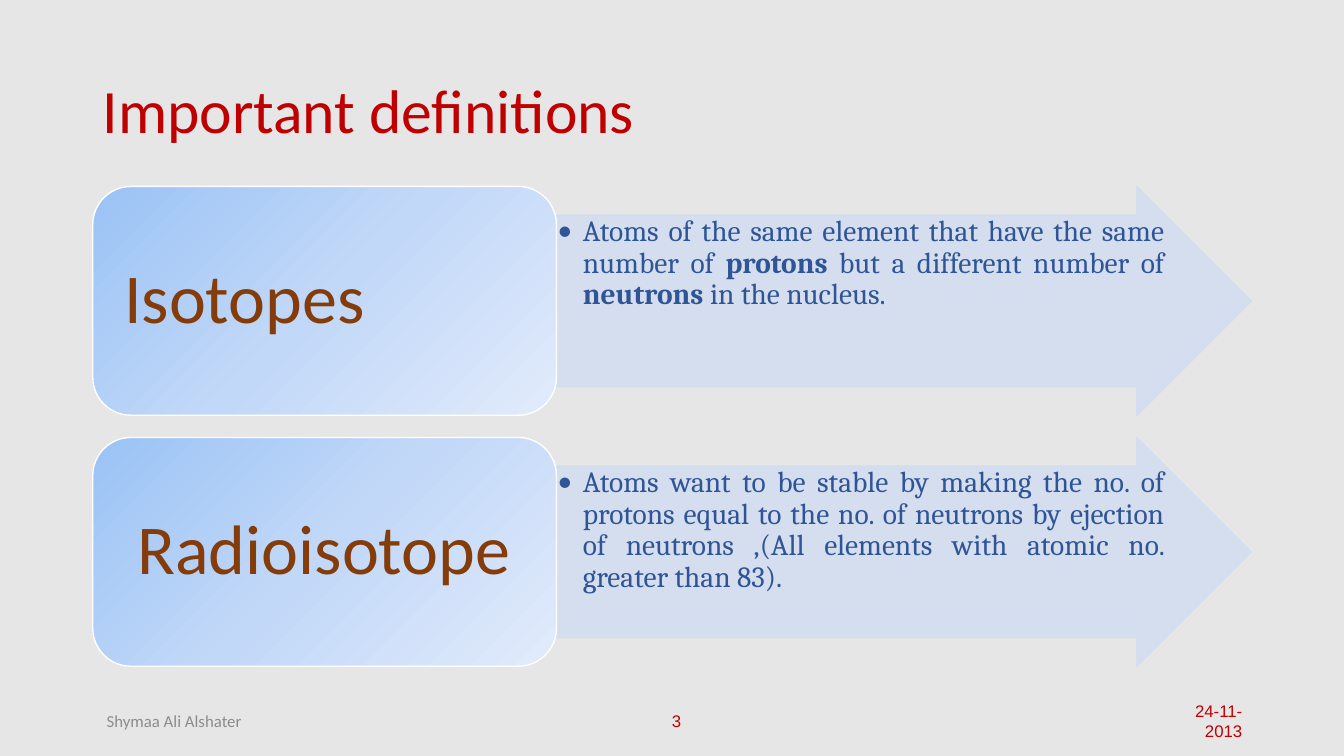
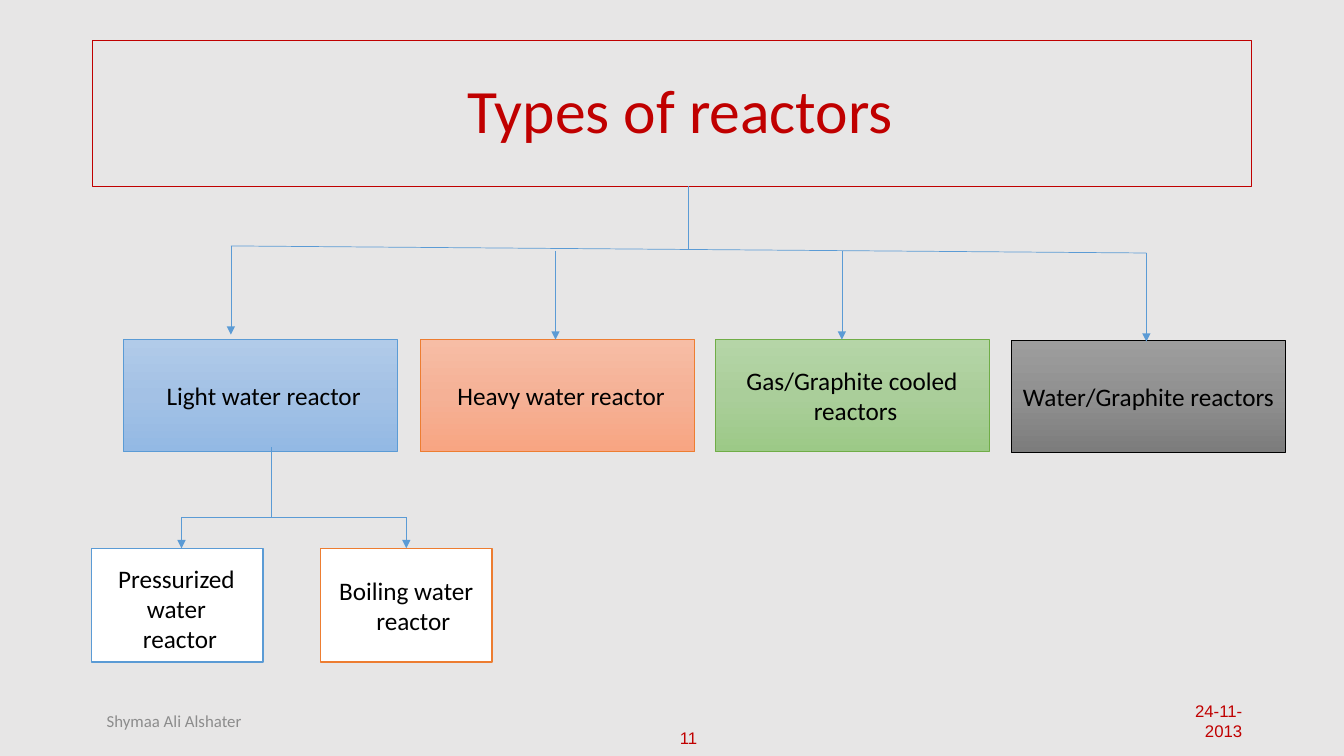
from lxml import etree
from pptx import Presentation
from pptx.dml.color import RGBColor
from pptx.enum import shapes, text
from pptx.oxml import parse_xml
from pptx.oxml.ns import nsdecls, qn
from pptx.util import Inches, Pt

COLORS = {
    "page": "E7E6E6", "red": "C00000", "grey": "8C8C8C", "brown": "843C0B",
    "navy": "2F5597", "arrow": "D2DEEF", "white": "FFFFFF", "black": "000000",
    "blue": "5B9BD5", "orange": "ED7D31", "green": "70AD47",
}
GRADIENTS = {
    "term": ("9AC3F5", "C2D8F8", "E1EBFB"),
    "blue": ("B1CBE9", "A3C1E5", "93B9E4"),
    "orange": ("F7BDA5", "F5B196", "F8A582"),
    "green": ("B5D5A7", "AACE9A", "9CC987"),
    "black": ("9D9D9D", "909090", "7C7C7C"),
}
AUTHOR, DATE = "Shymaa Ali Alshater", "24-11-2013"
BODY, SERIF, DIGITS = "Calibri", "Cambria", "Arial"
ALIGN = text.PP_ALIGN
SHAPE = shapes.MSO_SHAPE
LEFT, WIDTH = 0.92, 11.49

DEFINITIONS = [
    ("Isotopes", ALIGN.LEFT, False, [
        ("Atoms of the same element that have the same number of ", False),
        ("protons", True),
        (" but a different number of ", False),
        ("neutrons", True),
        (" in the nucleus.", False)]),
    ("Radioisotope", ALIGN.CENTER, True, [
        ("Atoms want to be stable by making the no. of protons equal to the no. "
         "of neutrons by ejection of neutrons ,(All elements with atomic no. "
         "greater than 83).", False)]),
]
REACTORS = [
    ("Light water reactor ", "blue", 1.22, 3.37),
    ("Heavy water reactor ", "orange", 4.17, 3.37),
    ("Gas/Graphite cooled reactors ", "green", 7.09, 3.37),
    ("Water/Graphite reactors ", "black", 10.03, 3.38),
]
LIGHT_WATER = [
    ("Pressurized water reactor ", "blue", 0.91, (0.17, 0.11, 0.19, 0.05)),
    ("Boiling water reactor  ", "orange", 3.18, (0.1, 0.05, 0.1, 0.05)),
]
ARROWS = [
    (2.29, 2.44, 3.32), (5.51, 2.49, 3.37), (8.35, 2.49, 3.37),
    (11.37, 2.51, 3.39), (1.8, 5.13, 5.44), (4.03, 5.13, 5.44),
]
BRANCHES = [
    (2.29, 2.44, 11.37, 2.51), (6.83, 2.47, 6.83, 1.85),
    (1.8, 5.13, 4.03, 5.13), (2.69, 5.13, 2.69, 4.43),
]


def rgb(name):
    return RGBColor.from_string(COLORS[name])


def write(sp, runs, size, color, align=ALIGN.CENTER, rtl=True, font=BODY,
          spacing=None, insets=(0.1, 0.05, 0.1, 0.05),
          anchor=text.MSO_ANCHOR.MIDDLE):
    tf = sp.text_frame
    tf.word_wrap = True
    tf.vertical_anchor = anchor
    tf.margin_left, tf.margin_top, tf.margin_right, tf.margin_bottom = map(Inches, insets)
    p = tf.paragraphs[0]
    p.alignment = align
    p.font.size, p.font.name, p.font.color.rgb = Pt(size), font, rgb(color)
    if spacing:
        p.line_spacing = spacing
    for words, bold in runs:
        r = p.add_run()
        r.text = words
        r.font.size, r.font.name, r.font.color.rgb = Pt(size), font, rgb(color)
        r.font.bold = bold
        if rtl:
            etree.SubElement(r.font._element, qn("a:cs"), typeface=DIGITS)
    if rtl:
        p._p.get_or_add_pPr().set("rtl", "1")
    return p


def add_text(s, box, words, size, color, align, **style):
    sp = s.shapes.add_textbox(*map(Inches, box))
    write(sp, [(words, False)], size, color, align, **style)
    return sp


def add_box(s, kind, box, line, width, fill=None):
    sp = s.shapes.add_shape(kind, *map(Inches, box))
    sp.shadow.inherit = False
    sp.line.color.rgb = rgb(line)
    sp.line.width = Pt(width)
    if fill:
        sp.fill.solid()
        sp.fill.fore_color.rgb = rgb(fill)
    return sp


def add_gradient(sp, name, angle):
    stops = "".join(
        f'<a:gs pos="{i * 50000}"><a:srgbClr val="{c}"/></a:gs>'
        for i, c in enumerate(GRADIENTS[name]))
    geometry = sp._element.spPr.find(qn("a:prstGeom"))
    geometry.addnext(parse_xml(
        f'<a:gradFill {nsdecls("a")} rotWithShape="1"><a:gsLst>{stops}</a:gsLst>'
        f'<a:lin ang="{angle * 60000}" scaled="0"/></a:gradFill>'))


def add_line(s, x1, y1, x2, y2, arrow=False):
    line = s.shapes.add_connector(
        shapes.MSO_CONNECTOR.STRAIGHT, *map(Inches, (x1, y1, x2, y2)))
    line.line.color.rgb = rgb("blue")
    line.line.width = Pt(0.5)
    if arrow:
        etree.SubElement(line.line._get_or_add_ln(), qn("a:tailEnd"), type="triangle")
    etree.SubElement(line._element.spPr, qn("a:effectLst"))


def add_slide(prs, title, align, number, number_at):
    s = prs.slides.add_slide(prs.slide_layouts[6])
    s.background.fill.solid()
    s.background.fill.fore_color.rgb = rgb("page")
    heading = add_text(s, (LEFT, 0.4, WIDTH, 1.45), title, 44, "red", align, spacing=0.9)
    add_text(s, (*number_at, 4.5, 0.4), number, 12, "red", ALIGN.CENTER)
    add_text(s, (0.96, 6.95, 1.77, 0.4), AUTHOR, 12, "grey", ALIGN.LEFT)
    add_text(s, (11.47, 6.95, 0.95, 0.4), DATE, 12, "red", ALIGN.RIGHT)
    return s, heading


def definitions_slide(prs):
    s, heading = add_slide(prs, "Important definitions", ALIGN.LEFT, "3", (4.46, 6.95))
    term_width, height, pitch = 4.6, 2.27, 2.49
    for i, (term, align, rtl, meaning) in enumerate(DEFINITIONS):
        top = 1.85 + i * pitch
        arrow = add_box(s, SHAPE.RIGHT_ARROW,
                        (LEFT + term_width, top, WIDTH - term_width, height),
                        "arrow", 1, "arrow")
        arrow.adjustments[0], arrow.adjustments[1] = 0.75, 0.5
        for color in arrow._element.spPr.iter(qn("a:srgbClr")):
            etree.SubElement(color, qn("a:alpha"), val="90000")
        p = write(arrow, meaning, 21, "navy", ALIGN.JUSTIFY, False, SERIF, 0.9,
                  (0.01, 0.01, 0.01, 0.01), text.MSO_ANCHOR.TOP)
        pPr = p._p.get_or_add_pPr()
        pPr.set("marL", str(Inches(0.25)))
        pPr.set("indent", str(Inches(-0.25)))
        defaults = pPr.find(qn("a:defRPr"))
        for tag, name, value in (("buFont", "typeface", BODY), ("buChar", "char", "•")):
            defaults.addprevious(parse_xml(f'<a:{tag} {nsdecls("a")} {name}="{value}"/>'))
        card = add_box(s, SHAPE.ROUNDED_RECTANGLE, (LEFT, top, term_width, height),
                       "white", 1)
        add_gradient(card, "term", 45)
        write(card, [(term, False)], 50, "brown", align, rtl, spacing=0.9,
              insets=(0.2, 0.1, 0.21, 0.1))


def reactors_slide(prs):
    s, heading = add_slide(prs, "Types of reactors ", ALIGN.CENTER, "11", (4.58, 7.12))
    heading.line.color.rgb = rgb("red")
    heading.line.width = Pt(0.75)
    for name, color, x, y in REACTORS:
        sp = add_box(s, SHAPE.RECTANGLE, (x, y, 2.72, 1.11), color, 0.5)
        add_gradient(sp, color, 90)
        write(sp, [(name, False)], 18, "black")
    for name, color, x, insets in LIGHT_WATER:
        sp = add_box(s, SHAPE.RECTANGLE, (x, 5.44, 1.7, 1.13), color, 1, "white")
        write(sp, [(name, False)], 18, "black", insets=insets)
    for x, y1, y2 in ARROWS:
        add_line(s, x, y1, x, y2, True)
    for ends in BRANCHES:
        add_line(s, *ends)


def main():
    prs = Presentation()
    prs.slide_width, prs.slide_height = Inches(13.33), Inches(7.5)
    definitions_slide(prs)
    reactors_slide(prs)
    prs.save("out.pptx")


if __name__ == "__main__":
    main()
